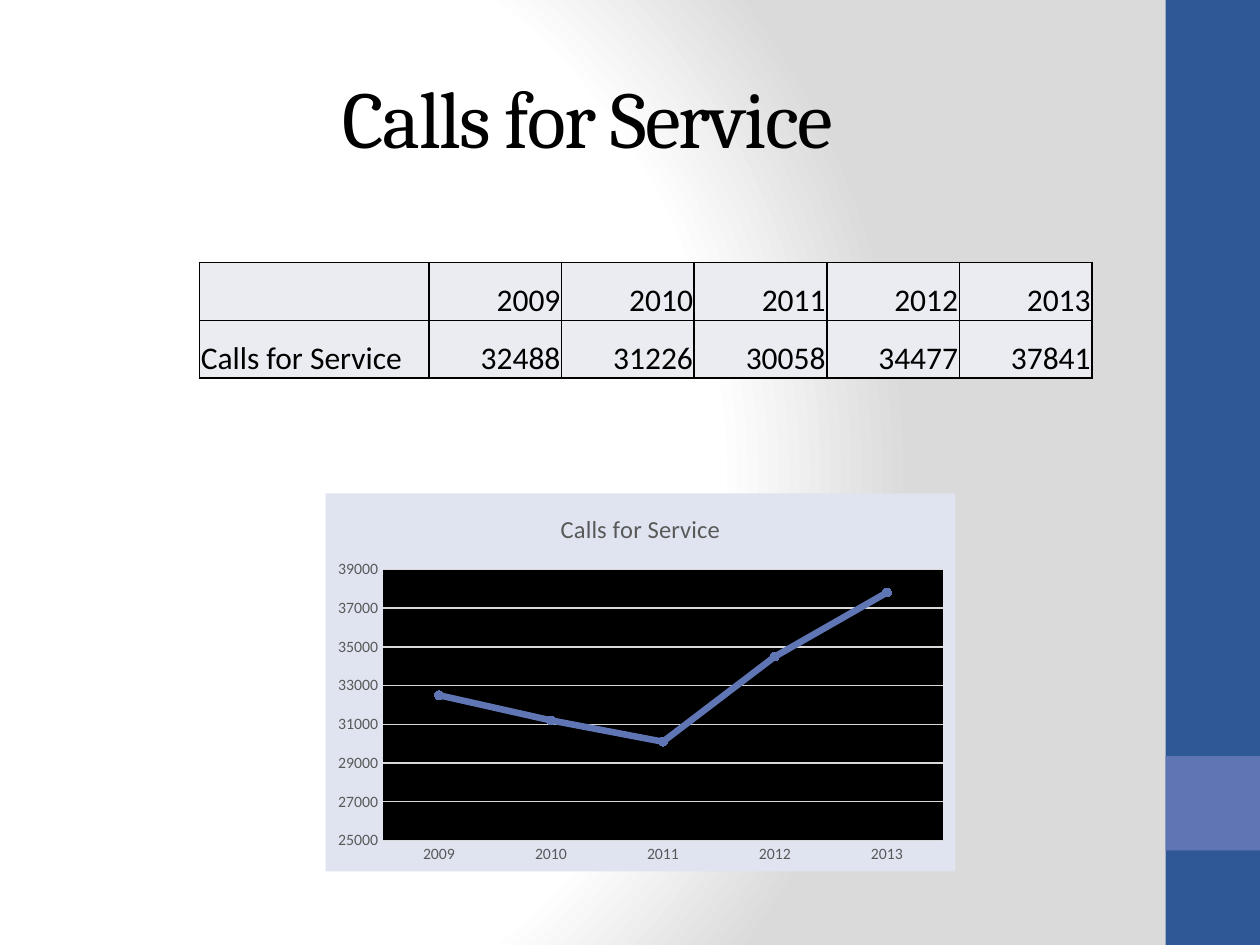
from pptx import Presentation
from pptx import util as u
from pptx.chart.data import CategoryChartData
from pptx.dml.color import RGBColor
from pptx.enum import chart as ch, shapes, text
from pptx.oxml import parse_xml
from pptx.oxml.ns import nsdecls, qn

BLACK = RGBColor(0x00, 0x00, 0x00)
WHITE = RGBColor(0xFF, 0xFF, 0xFF)
SILVER = RGBColor(0xDA, 0xDA, 0xDA)
NAVY = RGBColor(0x2F, 0x58, 0x97)
PERIWINKLE = RGBColor(0x60, 0x76, 0xB4)
CELL_TINT = RGBColor(0xEA, 0xEC, 0xF2)
CHART_TINT = RGBColor(0xDF, 0xE4, 0xF0)
GRID_GREY = RGBColor(0xD9, 0xD9, 0xD9)
LABEL_GREY = RGBColor(0x59, 0x59, 0x59)

HEADING = "Calls for Service"
CALLS = {"2009": 32488, "2010": 31226, "2011": 30058, "2012": 34477, "2013": 37841}


def solid_xml(color):
    return f'<a:solidFill><a:srgbClr val="{color}"/></a:solidFill>'


def area_fill(color):
    return parse_xml(f'<c:spPr {nsdecls("c", "a")}>{solid_xml(color)}'
                     '<a:ln><a:noFill/></a:ln></c:spPr>')


class Deck:
    """Slide style on a grid of 120 columns by 90 rows."""
    COLUMNS, ROWS = 120, 90
    HEAD_FONT, BODY_FONT = "Cambria", "Calibri"

    def __init__(self):
        self.prs = Presentation()
        self.prs.slide_width, self.prs.slide_height = u.Inches(10), u.Inches(7.5)
        self.slide = self.prs.slides.add_slide(self.prs.slide_layouts[6])

    def x(self, columns):
        return round(self.prs.slide_width * columns / self.COLUMNS)

    def y(self, rows):
        return round(self.prs.slide_height * rows / self.ROWS)

    def box(self, col, row, width, height):
        return self.x(col), self.y(row), self.x(width), self.y(height)

    def style(self, font, size, color, name=BODY_FONT):
        font.size, font.name, font.bold = u.Pt(size), name, False
        font.color.rgb = color

    def background(self, stops):
        self.slide.background.fill.solid()
        backdrop = self.slide.element.find(".//" + qn("p:bgPr"))
        marks = "".join(f'<a:gs pos="{share * 1000}"><a:srgbClr val="{color}"/></a:gs>'
                        for share, color in stops)
        glow = parse_xml(
            f'<a:gradFill {nsdecls("a")} rotWithShape="1"><a:gsLst>{marks}</a:gsLst>'
            '<a:path path="circle"><a:fillToRect l="20000" t="50000" r="100000" b="50000"/>'
            '</a:path></a:gradFill>')
        backdrop.replace(backdrop.find(qn("a:solidFill")), glow)

    def band(self, grid, color):
        band = self.slide.shapes.add_shape(shapes.MSO_SHAPE.RECTANGLE, *self.box(*grid))
        band.shadow.inherit = False
        band.fill.solid()
        band.fill.fore_color.rgb = color
        band.line.fill.background()

    def title(self, grid, wording):
        frame = self.slide.shapes.add_textbox(*self.box(*grid)).text_frame
        frame.word_wrap = True
        frame.vertical_anchor = text.MSO_ANCHOR.MIDDLE
        heading = frame.paragraphs[0]
        heading.alignment = text.PP_ALIGN.CENTER
        self.style(heading.font, 46, BLACK, self.HEAD_FONT)
        run = heading.add_run()
        run.text = wording
        run.font.size = u.Pt(46)
        run.font._element.set("spc", "-100")

    def cell(self, cell, wording, align):
        cell.text = wording
        cell.vertical_anchor = text.MSO_ANCHOR.BOTTOM
        cell.margin_left = cell.margin_top = cell.margin_right = u.Inches(0.01)
        cell.margin_bottom = 0
        cell.text_frame.paragraphs[0].alignment = align
        self.style(cell.text_frame.paragraphs[0].font, 18, BLACK)
        # Borders come before the fill in the cell properties
        props = cell._tc.get_or_add_tcPr()
        for side in ("lnL", "lnR", "lnT", "lnB"):
            props.append(parse_xml(f'<a:{side} {nsdecls("a")} w="12700">'
                                   f'{solid_xml(BLACK)}</a:{side}>'))
        cell.fill.solid()
        cell.fill.fore_color.rgb = CELL_TINT

    def table(self, grid, rows, label_width):
        table = self.slide.shapes.add_table(len(rows), len(rows[0]), *self.box(*grid)).table
        table.first_row = table.horz_banding = False
        year_width = (grid[2] - label_width) / (len(rows[0]) - 1)
        for i, column in enumerate(table.columns):
            column.width = self.x(year_width if i else label_width)
        for r, row in enumerate(rows):
            for c, wording in enumerate(row):
                align = text.PP_ALIGN.RIGHT if c else text.PP_ALIGN.LEFT
                self.cell(table.cell(r, c), wording, align)

    def line_chart(self, grid, name, values):
        data = CategoryChartData()
        data.categories = list(values)
        data.add_series(name, [round(count, -2) for count in values.values()])
        chart = self.slide.shapes.add_chart(
            ch.XL_CHART_TYPE.LINE_MARKERS, *self.box(*grid), data).chart
        self.style(chart.font, 10, BLACK)
        chart.has_legend = False
        chart.has_title = True
        heading = chart.chart_title.text_frame
        heading.text = name
        self.style(heading.paragraphs[0].font, 14, LABEL_GREY)
        chart.chart_title.include_in_layout = False

        # Axes
        for axis in (chart.category_axis, chart.value_axis):
            axis.major_tick_mark = axis.minor_tick_mark = ch.XL_TICK_MARK.NONE
            self.style(axis.tick_labels.font, 9, LABEL_GREY)
        calls = chart.value_axis
        calls.minimum_scale, calls.maximum_scale, calls.major_unit = 25000, 39000, 2000
        calls.format.line.fill.background()
        for line in (chart.category_axis.format.line, calls.major_gridlines.format.line):
            line.color.rgb, line.width = GRID_GREY, u.Pt(0.75)

        # Series
        chart.plots[0].vary_by_categories = False
        trend = chart.plots[0].series[0]
        trend.smooth = False
        trend.format.line.color.rgb, trend.format.line.width = PERIWINKLE, u.Pt(3.75)
        trend.marker.style, trend.marker.size = ch.XL_MARKER_STYLE.CIRCLE, 5
        trend.marker.format.fill.solid()
        trend.marker.format.fill.fore_color.rgb = PERIWINKLE
        trend.marker.format.line.color.rgb = PERIWINKLE

        # Chart and plot backgrounds
        body = chart.element.find(qn("c:chart"))
        body.addnext(area_fill(CHART_TINT))
        body.find(qn("c:plotArea")).append(area_fill(BLACK))


def main():
    deck = Deck()
    # Backdrop and side bands
    deck.background([(0, WHITE), (75, WHITE), (100, SILVER)])
    deck.band((111, 0, 9, 90), NAVY)
    deck.band((111, 72, 9, 9), PERIWINKLE)
    # Heading, yearly figures and their trend
    deck.title((6, 3.6, 100, 15), HEADING)
    figures = [["", *CALLS], [HEADING, *map(str, CALLS.values())]]
    deck.table((19, 25, 85, 11), figures, label_width=21.87)
    deck.line_chart((31, 47, 60, 36), HEADING, CALLS)
    deck.prs.save("out.pptx")


if __name__ == "__main__":
    main()
